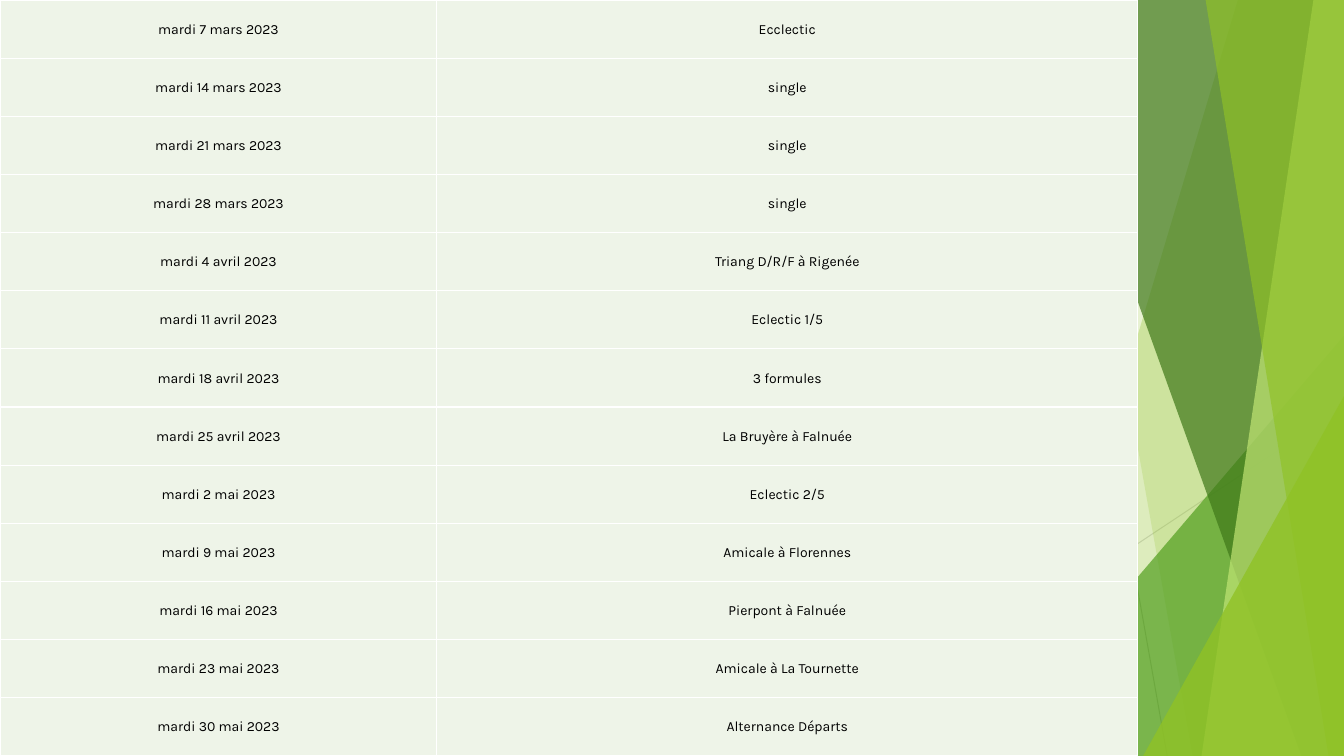
from lxml.etree import SubElement
from pptx import Presentation
from pptx.dml.color import RGBColor
from pptx.enum.shapes import MSO_CONNECTOR, MSO_SHAPE
from pptx.enum.text import MSO_ANCHOR, PP_ALIGN
from pptx.oxml import parse_xml
from pptx.oxml.ns import nsdecls, qn
from pptx.util import Inches, Pt

COLORS = {
    "lime": "90C226", "green": "54A021", "forest": "3F7819", "pale": "C0E474",
    "gray": "BFBFBF", "silver": "D9D9D9",
    "cell": "EEF4E8", "border": "FFFFFF", "text": "000000",
}
EVENTS = [
    ("mardi 7 mars 2023", "Ecclectic"),
    ("mardi 14 mars 2023", "single"),
    ("mardi 21 mars 2023", "single"),
    ("mardi 28 mars 2023", "single"),
    ("mardi 4 avril 2023", "Triang D/R/F à Rigenée"),
    ("mardi 11 avril 2023", "Eclectic 1/5"),
    ("mardi 18 avril 2023", "3 formules"),
    ("mardi 25 avril 2023", "La Bruyère à Falnuée"),
    ("mardi 2 mai 2023", "Eclectic 2/5"),
    ("mardi 9 mai 2023", "Amicale à Florennes"),
    ("mardi 16 mai 2023", "Pierpont à Falnuée"),
    ("mardi 23 mai 2023", "Amicale à La Tournette"),
    ("mardi 30 mai 2023", "Alternance Départs"),
]

prs = Presentation()
prs.slide_width, prs.slide_height = Inches(13.33), Inches(7.5)
s = prs.slides.add_slide(prs.slide_layouts[6])

# The grid has 40 columns and one row per event
COLS, ROWS = 40, len(EVENTS)
W, H = prs.slide_width, prs.slide_height


def col(n):
    return round(W * n / COLS)


def row(n):
    return round(H * n / ROWS)


# Thin lines: start column and row, end column and row
for x1, y1, x2, y2, color in [(30.75, 0, 34.74, ROWS, "gray"),
                              (COLS, 6.99, 24.36, ROWS, "silver")]:
    line = s.shapes.add_connector(MSO_CONNECTOR.STRAIGHT, col(x1), row(y1), col(x2), row(y2))
    line.line.color.rgb = RGBColor.from_string(COLORS[color])
    line.line.width = Pt(0.75)
    SubElement(line._element.spPr, qn("a:effectLst"))

# Translucent panes reaching the right edge:
# a band has its left edge's top and bottom columns, a triangle its left column and top row
PANES = [
    ("band", 36.84, 30.12, "lime", 30),
    ("band", 31.5, 35.49, "lime", 20),
    ("triangle", 29.31, 5.77, "green", 72),
    ("band", 30.63, 38.73, "forest", 70),
    ("band", 39.09, 35.76, "pale", 70),
    ("band", 35.88, 39.54, "lime", 65),
    ("triangle", 34.02, 6.81, "lime", 80),
]
for kind, a, b, color, opacity in PANES:
    if kind == "band":
        outline = s.shapes.build_freeform(col(a), 0)
        outline.add_line_segments([(W, 0), (W, H), (col(b), H)], close=True)
        sp = outline.convert_to_shape()
    else:
        sp = s.shapes.add_shape(MSO_SHAPE.ISOSCELES_TRIANGLE,
                                col(a), row(b), W - col(a), H - row(b))
        sp.adjustments[0] = 1
    sp.shadow.inherit = False
    sp.line.fill.background()
    sp.fill.solid()
    sp.fill.fore_color.rgb = RGBColor.from_string(COLORS[color])
    tint = sp._element.spPr.find(qn("a:solidFill"))[0]
    SubElement(tint, qn("a:alpha"), val=str(opacity * 1000))

# Calendar
widths = [col(13), col(20.86)]
table = s.shapes.add_table(ROWS, len(widths), 0, 0, sum(widths), H).table
table.first_row = table.horz_banding = False
for column, width in zip(table.columns, widths):
    column.width = width
for i, event in enumerate(EVENTS):
    table.rows[i].height = row(1)
    for j, text in enumerate(event):
        cell = table.cell(i, j)
        cell.margin_left = cell.margin_right = cell.margin_top = Inches(0.01)
        cell.margin_bottom = 0
        cell.vertical_anchor = MSO_ANCHOR.MIDDLE
        for side in ("lnL", "lnR", "lnT", "lnB"):
            cell._tc.get_or_add_tcPr().append(parse_xml(
                f'<a:{side} {nsdecls("a")} w="{Pt(1)}"><a:solidFill>'
                f'<a:srgbClr val="{COLORS["border"]}"/></a:solidFill></a:{side}>'))
        cell.fill.solid()
        cell.fill.fore_color.rgb = RGBColor.from_string(COLORS["cell"])
        p = cell.text_frame.paragraphs[0]
        p.text = text
        p.alignment = PP_ALIGN.CENTER
        r = p.runs[0]
        r.font.name, r.font.size = "Karla", Pt(10)
        r.font.color.rgb = RGBColor.from_string(COLORS["text"])

prs.save("out.pptx")
